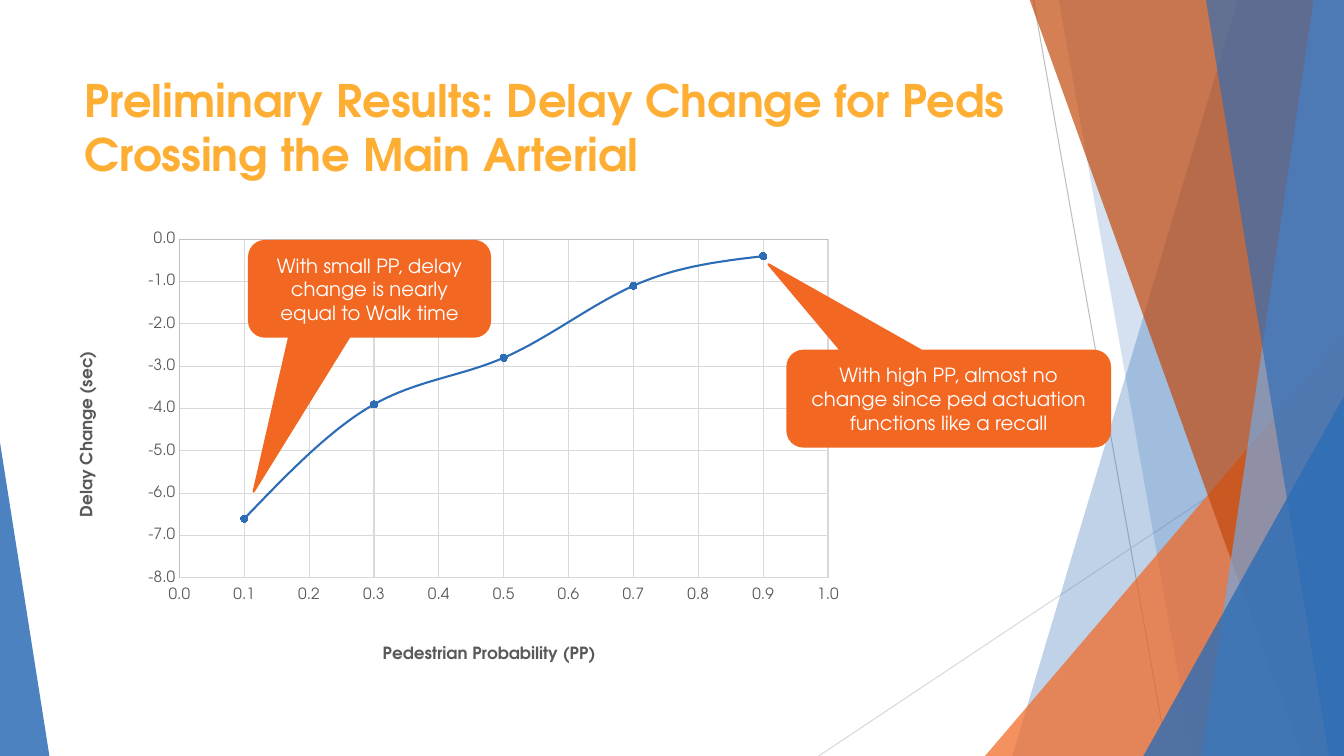
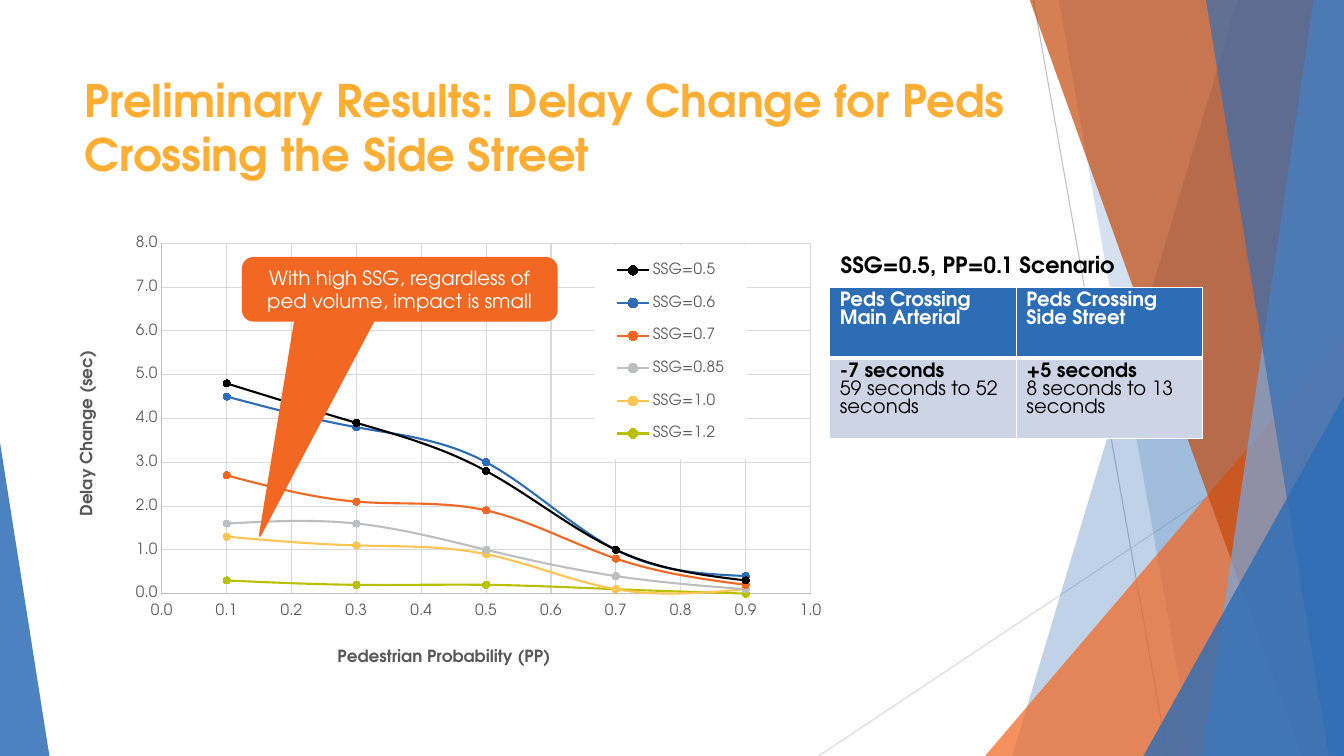
"""Build two slides on how pedestrian delay changes with pedestrian probability."""
import lxml.etree
import pptx
import pptx.chart.data
import pptx.dml.color
import pptx.enum.chart
import pptx.enum.shapes
import pptx.enum.text
import pptx.oxml.ns
import pptx.util

Inches = pptx.util.Inches
Pt = pptx.util.Pt
qn = pptx.oxml.ns.qn
Shape = pptx.enum.shapes.MSO_SHAPE
Align = pptx.enum.text.PP_ALIGN
Anchor = pptx.enum.text.MSO_ANCHOR
Label = pptx.enum.chart.XL_TICK_LABEL_POSITION

FONT = "TeX Gyre Adventor"
BLUE, ORANGE, GOLD = "2D6DB6", "F26722", "FDAE33"
WHITE, BLACK, GREY = "FFFFFF", "000000", "595959"
WIDE, HIGH = 13.33, 7.5


def ink(hue):
    return pptx.dml.color.RGBColor.from_string(hue)


def write(frame, text, size=14, hue=BLACK, bold=False, align=None, add=False):
    para = frame.add_paragraph() if add else frame.paragraphs[0]
    run = para.add_run()
    run.text = text
    run.font.name = FONT
    run.font.size = Pt(size)
    run.font.bold = bold
    run.font.color.rgb = ink(hue)
    para.alignment = align


deck = pptx.Presentation()
deck.slide_width = Inches(WIDE)
deck.slide_height = Inches(HIGH)
layout = deck.slide_layouts[5]
head = layout.placeholders[0]
head.left, head.top, head.width, head.height = [Inches(n) for n in (0.74, 0.67, 9.4, 1.44)]

first = deck.slides.add_slide(layout)
second = deck.slides.add_slide(layout)

decor = []
rays = [(10.25, 0, 11.58, HIGH, "BFBFBF"), (WIDE, 4.03, 8.12, HIGH, "D9D9D9")]
for *ends, hue in rays:
    ray = first.shapes.add_connector(
        pptx.enum.shapes.MSO_CONNECTOR.STRAIGHT, *[Inches(n) for n in ends])
    ray.line.color.rgb = ink(hue)
    ray.line.width = Pt(0.75)
    lxml.etree.SubElement(ray.element.spPr, qn("a:effectLst"))
    decor.append(ray)

bands = [
    (BLUE, 30, 12.28, 10.04, None),
    (BLUE, 20, 10.5, 11.83, None),
    (ORANGE, 72, 9.77, WIDE, 3.33),
    ("C3490C", 70, 10.21, 12.91, None),
    ("77A7DD", 70, 13.03, 11.92, None),
    (BLUE, 65, 11.96, 13.18, None),
    (BLUE, 80, 11.34, WIDE, 3.93),
    (BLUE, 85, 0, 0.49, 4.39),
]
for hue, alpha, start, end, peak in bands:
    if peak is None:
        pen = first.shapes.build_freeform(Inches(start), Inches(-0.01))
        corners = [(WIDE, -0.01), (WIDE, HIGH), (end, HIGH)]
        pen.add_line_segments([(Inches(x), Inches(y)) for x, y in corners])
        band = pen.convert_to_shape()
    else:
        band = first.shapes.add_shape(
            Shape.ISOSCELES_TRIANGLE, Inches(start), Inches(peak),
            Inches(end - start), Inches(HIGH - peak))
        band.adjustments[0] = 1 if start else 0
    band.shadow.inherit = False
    band.fill.solid()
    band.fill.fore_color.rgb = ink(hue)
    band.line.fill.background()
    tint = next(band.element.spPr.iter(qn("a:srgbClr")))
    lxml.etree.SubElement(tint, qn("a:alpha")).set("val", str(alpha * 1000))
    decor.append(band)

for n, shape in enumerate(decor):
    next(shape.element.iter(qn("p:cNvPr"))).set("id", str(20 + n))
    layout.shapes.element.insert(2 + n, shape.element)

probs = [0.1, 0.3, 0.5, 0.7, 0.9]
pages = [
    dict(
        slide=first, title="Preliminary Results: Delay Change for Peds Crossing the Main Arterial",
        box=(0.74, 2.11, 7.76, 4.63), span=(-8, 0), plot=(0.134, 0.057, 0.829, 0.726),
        names=[(0.39, 0.92), (0, 0.29)], legend=None,
        lines=[("Series 1", BLUE, [-6.6, -3.9, -2.8, -1.1, -0.4])],
        calls=[
            ("With small PP, delay change is nearly equal to Walk time",
             (2.47, 2.39, 2.39, 0.95), (-0.481, 2.118)),
            ("With high PP, almost no change since ped actuation functions like a recall",
             (7.81, 3.48, 3.2, 0.95), (-0.559, -1.404)),
        ]),
    dict(
        slide=second, title="Preliminary Results: Delay Change for Peds Crossing the Side Street",
        box=(0.74, 2.11, 7.58, 4.61), span=(0, 8), plot=(0.114, 0.066, 0.849, 0.754),
        names=[(0.34, 0.93), (0, 0.29)], legend=(0.68, 0.07, 0.2, 0.46),
        lines=[
            ("SSG=0.5", BLACK, [4.8, 3.9, 2.8, 1, 0.3]),
            ("SSG=0.6", BLUE, [4.5, 3.8, 3, 1, 0.4]),
            ("SSG=0.7", ORANGE, [2.7, 2.1, 1.9, 0.8, 0.2]),
            ("SSG=0.85", "BCBEC0", [1.6, 1.6, 1, 0.4, 0.1]),
            ("SSG=1.0", "FEC553", [1.3, 1.1, 0.9, 0.1, 0.1]),
            ("SSG=1.2", "B9C000", [0.3, 0.2, 0.2, 0.1, 0]),
        ],
        calls=[
            ("With high SSG, regardless of ped volume, impact is small",
             (2.41, 2.56, 3.11, 0.62), (-0.446, 3.945)),
        ]),
]

for page in pages:
    shapes = page["slide"].shapes
    frame = shapes.title.text_frame
    frame.vertical_anchor = Anchor.TOP
    frame.auto_size = pptx.enum.text.MSO_AUTO_SIZE.NONE
    write(frame, page["title"], size=32, hue=GOLD, bold=True, align=Align.LEFT)

    data = pptx.chart.data.XyChartData(number_format="0.0")
    for name, hue, delays in page["lines"]:
        line = data.add_series(name)
        for prob, delay in zip(probs, delays):
            line.add_data_point(prob, delay)
    chart = shapes.add_chart(
        pptx.enum.chart.XL_CHART_TYPE.XY_SCATTER_SMOOTH,
        *[Inches(n) for n in page["box"]], data).chart
    chart.has_title = False
    chart.font.name = FONT
    chart.font.size = Pt(10)
    chart.plots[0].vary_by_categories = False
    for line, (name, hue, delays) in zip(chart.plots[0].series, page["lines"]):
        line.format.line.color.rgb = ink(hue)
        line.format.line.width = Pt(1.5)
        mark = line.marker
        mark.style = pptx.enum.chart.XL_MARKER_STYLE.CIRCLE
        mark.size = 5
        mark.format.fill.solid()
        mark.format.fill.fore_color.rgb = ink(hue)
        mark.format.line.color.rgb = ink(hue)
    for smooth in chart.element.iter(qn("c:smooth")):
        smooth.set("val", "1")

    axes = [
        (chart.category_axis, "Pedestrian Probability (PP)", (0, 1), 0.1, Label.LOW),
        (chart.value_axis, "Delay Change (sec)", page["span"], 1, Label.NEXT_TO_AXIS),
    ]
    for axis, name, (low, high), step, side in axes:
        axis.minimum_scale = low
        axis.maximum_scale = high
        axis.major_unit = step
        axis.major_tick_mark = pptx.enum.chart.XL_TICK_MARK.NONE
        axis.minor_tick_mark = pptx.enum.chart.XL_TICK_MARK.NONE
        axis.has_major_gridlines = True
        for rule, hue in [(axis.format.line, "BFBFBF"),
                          (axis.major_gridlines.format.line, "D9D9D9")]:
            rule.color.rgb = ink(hue)
            rule.width = Pt(0.75)
        axis.tick_label_position = side
        ticks = axis.tick_labels
        ticks.number_format = "#,##0.0"
        ticks.number_format_is_linked = False
        ticks.font.name = FONT
        ticks.font.size = Pt(11)
        ticks.font.color.rgb = ink(GREY)
        write(axis.axis_title.text_frame, name, size=12, hue=GREY, bold=True)

    titles = list(chart.element.iter(qn("c:title")))
    turn = next(titles[1].iter(qn("a:bodyPr")))
    turn.set("rot", "-5400000")
    turn.set("vert", "horz")
    parts = [(next(chart.element.iter(qn("c:plotArea"))), 0, page["plot"])]
    parts += [(node, 1, spot) for node, spot in zip(titles, page["names"])]

    chart.has_legend = page["legend"] is not None
    if chart.has_legend:
        chart.legend.include_in_layout = True
        chart.legend.font.name = FONT
        chart.legend.font.size = Pt(11)
        chart.legend.font.color.rgb = ink(GREY)
        node = next(chart.element.iter(qn("c:legend")))
        back = lxml.etree.Element(qn("c:spPr"))
        fill = lxml.etree.SubElement(back, qn("a:solidFill"))
        lxml.etree.SubElement(fill, qn("a:srgbClr")).set("val", WHITE)
        node.find(qn("c:overlay")).addnext(back)
        parts.append((node, 1, page["legend"]))

    for node, index, spot in parts:
        for old in node.findall(qn("c:layout")):
            node.remove(old)
        place = lxml.etree.Element(qn("c:layout"))
        hand = lxml.etree.SubElement(place, qn("c:manualLayout"))
        marks = [("layoutTarget", "inner")] if index == 0 else []
        marks += [("xMode", "edge"), ("yMode", "edge"), *zip("xywh", spot)]
        for tag, val in marks:
            lxml.etree.SubElement(hand, qn("c:" + tag)).set("val", str(val))
        node.insert(index, place)

    for text, box, tip in page["calls"]:
        call = shapes.add_shape(
            Shape.ROUNDED_RECTANGULAR_CALLOUT, *[Inches(n) for n in box])
        call.adjustments[0], call.adjustments[1] = tip
        call.shadow.inherit = False
        call.fill.solid()
        call.fill.fore_color.rgb = ink(ORANGE)
        call.line.color.rgb = ink(ORANGE)
        call.line.width = Pt(1.5)
        call.text_frame.word_wrap = True
        call.text_frame.vertical_anchor = Anchor.MIDDLE
        write(call.text_frame, text, hue=WHITE, align=Align.CENTER)

table = second.shapes.add_table(
    2, 2, Inches(8.23), Inches(2.85), Inches(3.7), Inches(1.5)).table
for col in table.columns:
    col.width = Inches(1.85)
for row, tall in zip(table.rows, (0.7, 0.8)):
    row.height = Inches(tall)
cells = [
    [["Peds Crossing Main Arterial"], ["Peds Crossing Side Street"]],
    [["-7 seconds", "59 seconds to 52 seconds"], ["+5 seconds", "8 seconds to 13 seconds"]],
]
for r, row in enumerate(cells):
    for c, texts in enumerate(row):
        cell = table.cell(r, c)
        cell.fill.solid()
        cell.fill.fore_color.rgb = ink("CDD4E5" if r else BLUE)
        for n, text in enumerate(texts):
            write(cell.text_frame, text, hue=BLACK if r else WHITE, bold=n == 0, add=n > 0)
        props = cell._tc.get_or_add_tcPr()
        for n, side in enumerate("LRTB"):
            thick = 3 if side == "BT"[r] else 1
            edge = lxml.etree.Element(qn("a:ln" + side), w=str(Pt(thick)))
            fill = lxml.etree.SubElement(edge, qn("a:solidFill"))
            lxml.etree.SubElement(fill, qn("a:srgbClr")).set("val", WHITE)
            props.insert(n, edge)

label = second.shapes.add_textbox(Inches(8.24), Inches(2.44), Inches(2.98), Inches(0.37))
label.text_frame.word_wrap = True
label.text_frame.auto_size = pptx.enum.text.MSO_AUTO_SIZE.SHAPE_TO_FIT_TEXT
write(label.text_frame, "SSG=0.5, PP=0.1 Scenario", size=16, bold=True)

deck.save("out.pptx")
